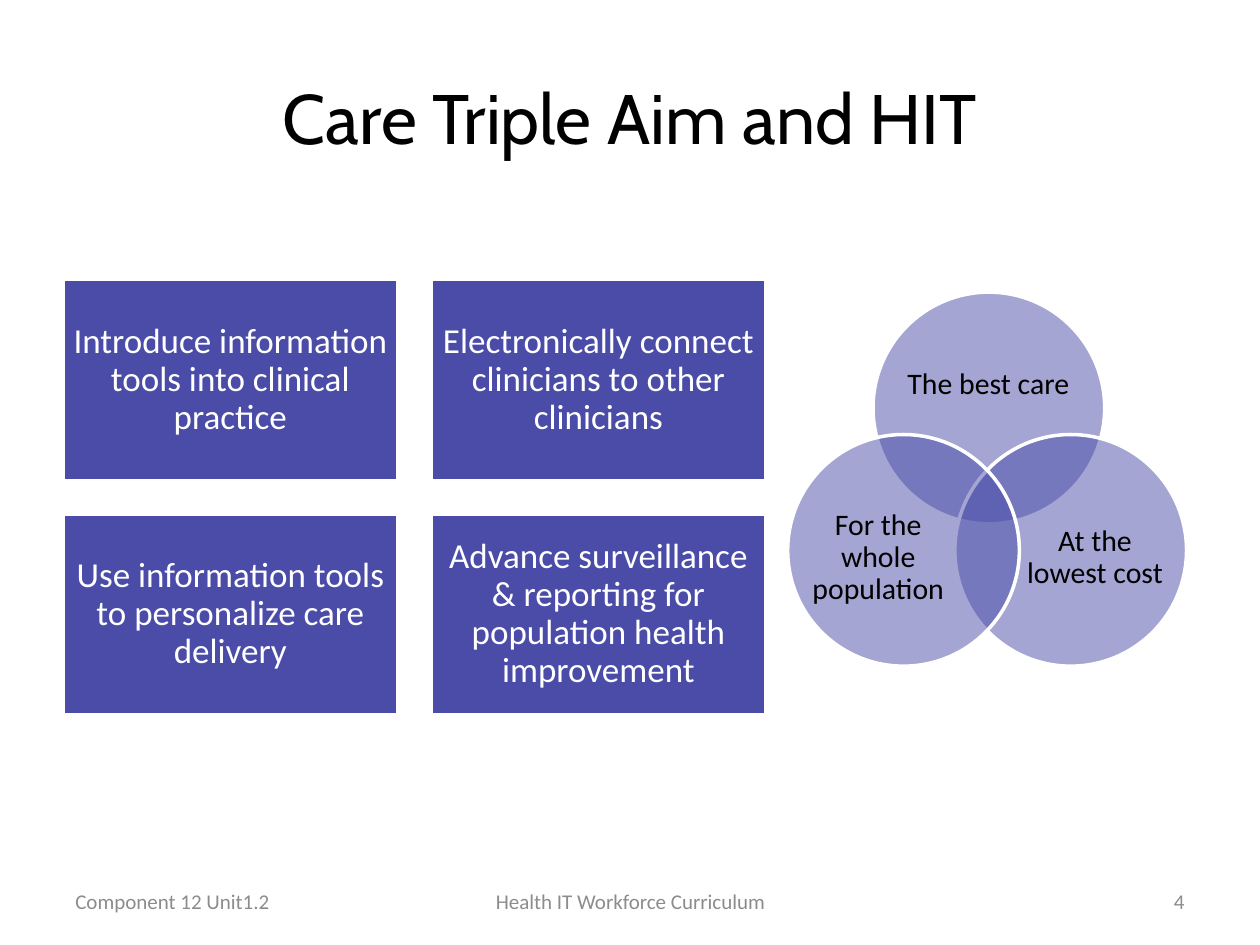
from dataclasses import dataclass

from lxml import etree
from pptx import Presentation
from pptx.dml.color import RGBColor
from pptx.enum.shapes import MSO_SHAPE
from pptx.enum.text import MSO_ANCHOR, PP_ALIGN
from pptx.oxml.ns import qn
from pptx.util import Cm, Pt

RECTANGLE, OVAL = MSO_SHAPE.RECTANGLE, MSO_SHAPE.OVAL
LEFT, CENTER, RIGHT = PP_ALIGN.LEFT, PP_ALIGN.CENTER, PP_ALIGN.RIGHT
MIDDLE = MSO_ANCHOR.MIDDLE

INDIGO, WHITE, BLACK, GRAY = "4A4CA8", "FFFFFF", "000000", "8C8C8C"
BODY_FONT, TITLE_FONT = "Calibri", "Cabin"


@dataclass
class Box:
    """A rectangular area, in centimetres."""
    left: float
    top: float
    width: float
    height: float

    def lengths(self) -> tuple:
        return Cm(self.left), Cm(self.top), Cm(self.width), Cm(self.height)


@dataclass
class TextStyle:
    size: int
    color: str
    font: str = BODY_FONT
    align: PP_ALIGN = CENTER
    line_spacing: float = 1.0
    margin: tuple = (0.25, 0.13)


@dataclass
class Aim:
    text: str
    circle: Box
    label: Box


def rgb(color: str) -> RGBColor:
    return RGBColor.from_string(color)


def write_text(shape, text: str, style: TextStyle) -> None:
    frame = shape.text_frame
    frame.text = text
    frame.word_wrap = True
    frame.vertical_anchor = MIDDLE
    horizontal, vertical = style.margin
    frame.margin_left = frame.margin_right = Cm(horizontal)
    frame.margin_top = frame.margin_bottom = Cm(vertical)
    paragraph = frame.paragraphs[0]
    paragraph.alignment = style.align
    paragraph.line_spacing = style.line_spacing
    font = paragraph.runs[0].font
    font.name, font.size = style.font, Pt(style.size)
    font.color.rgb = rgb(style.color)


def add_text(slide, text: str, box: Box, style: TextStyle) -> None:
    write_text(slide.shapes.add_textbox(*box.lengths()), text, style)


def add_outlined_shape(slide, kind: MSO_SHAPE, box: Box, opacity: int = 100):
    shape = slide.shapes.add_shape(kind, *box.lengths())
    shape.shadow.inherit = False
    shape.fill.solid()
    shape.fill.fore_color.rgb = rgb(INDIGO)
    shape.line.color.rgb = rgb(WHITE)
    shape.line.width = Pt(2)
    if opacity < 100:
        color = shape.fill._xPr.find(qn("a:solidFill"))[0]
        etree.SubElement(color, qn("a:alpha")).set("val", str(opacity * 1000))
    return shape


TITLE_STYLE = TextStyle(40, BLACK, TITLE_FONT)
AIM_STYLE = TextStyle(17, BLACK, line_spacing=0.9, margin=(0, 0))
ACTION_STYLE = TextStyle(20, WHITE, line_spacing=0.9, margin=(0.2, 0.2))

DIAMETER = 4.67
AIMS = [
    Aim("The best care", Box(17.6, 5.89, DIAMETER, DIAMETER),
        Box(18.21, 6.71, 3.43, 2.11)),
    Aim("At the lowest cost", Box(19.25, 8.76, DIAMETER, DIAMETER),
        Box(20.68, 9.96, 2.79, 2.57)),
    Aim("For the whole population", Box(15.88, 8.76, DIAMETER, DIAMETER),
        Box(16.31, 9.96, 2.79, 2.57)),
]

ACTIONS = [
    "Introduce information tools into clinical practice",
    "Electronically connect clinicians to other clinicians",
    "Use information tools to personalize care delivery",
    "Advance surveillance & reporting for population health improvement",
]
ACTION_LEFT, ACTION_TOP = 1.27, 5.64
ACTION_WIDTH, ACTION_HEIGHT, ACTION_GAP = 6.75, 4.05, 0.67

FOOTER_TOP, FOOTER_HEIGHT = 17.65, 1.02
FOOTERS = [  # text, left, width, alignment
    ("Component 12 Unit1.2", 1.27, 5.92, LEFT),
    ("4", 18.21, 5.92, RIGHT),
    ("Health IT Workforce Curriculum", 8.69, 8.05, CENTER),
]


def main() -> None:
    presentation = Presentation()
    presentation.slide_width, presentation.slide_height = Cm(25.4), Cm(19.05)
    slide = presentation.slides.add_slide(presentation.slide_layouts[6])

    # Title
    add_text(slide, "Care Triple Aim and HIT",
             Box(1.27, 0.76, 22.86, 3.18), TITLE_STYLE)

    # Overlapping circles of the three aims
    for aim in AIMS:
        add_outlined_shape(slide, OVAL, aim.circle, opacity=50)
        add_text(slide, aim.text, aim.label, AIM_STYLE)

    # Two-by-two grid of actions
    for index, action in enumerate(ACTIONS):
        row, column = divmod(index, 2)
        box = Box(ACTION_LEFT + column * (ACTION_WIDTH + ACTION_GAP),
                  ACTION_TOP + row * (ACTION_HEIGHT + ACTION_GAP),
                  ACTION_WIDTH, ACTION_HEIGHT)
        write_text(add_outlined_shape(slide, RECTANGLE, box),
                   action, ACTION_STYLE)

    # Footer
    for text, left, width, align in FOOTERS:
        add_text(slide, text, Box(left, FOOTER_TOP, width, FOOTER_HEIGHT),
                 TextStyle(12, GRAY, align=align))

    presentation.save("out.pptx")


if __name__ == "__main__":
    main()
